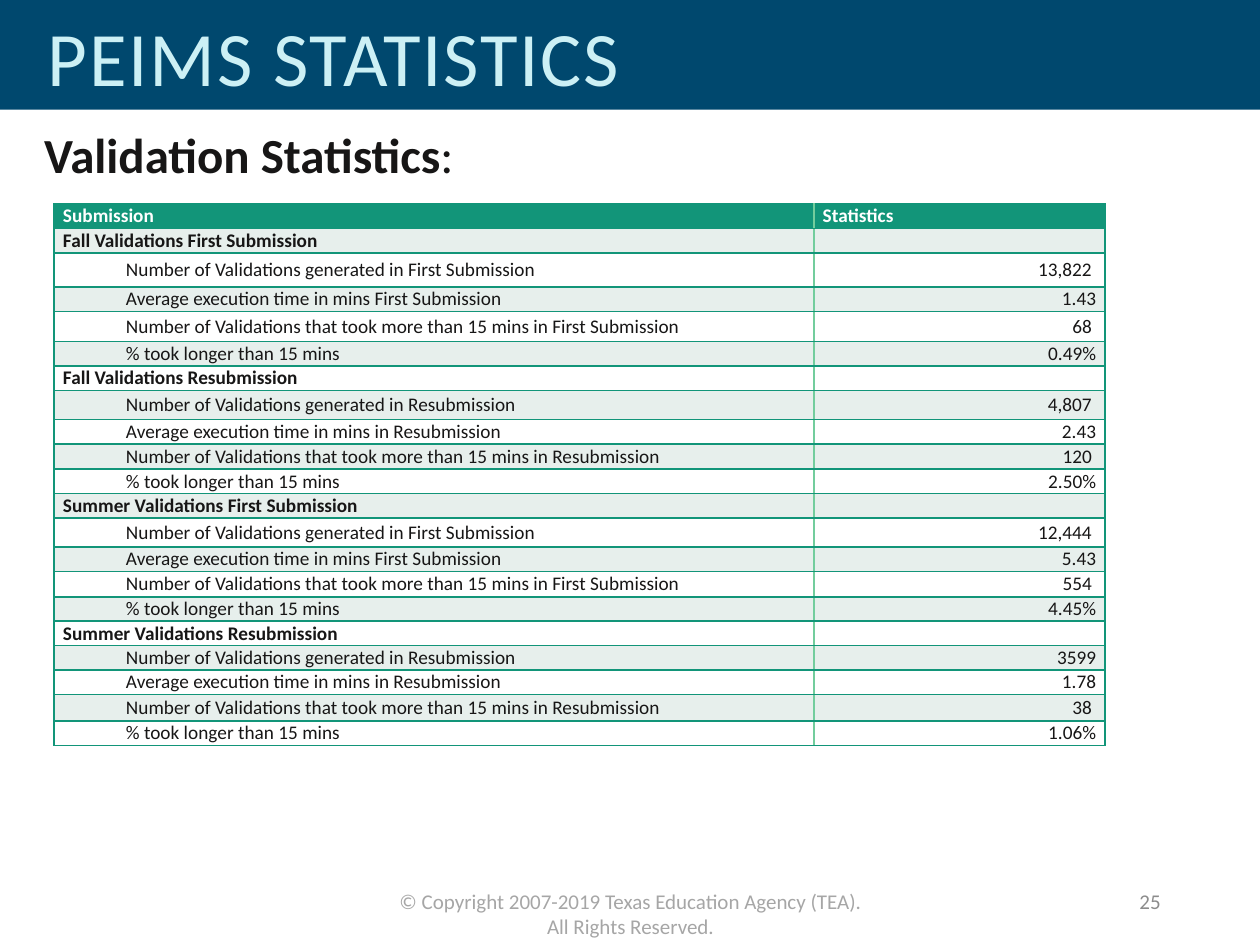
"""Build the PEIMS validation statistics slide."""
from dataclasses import dataclass

from lxml.etree import SubElement
from pptx import Presentation
from pptx.dml.color import RGBColor as Color
from pptx.enum.shapes import MSO_SHAPE as Shape
from pptx.enum.text import MSO_ANCHOR as Anchor, MSO_AUTO_SIZE as AutoSize, PP_ALIGN as Align
from pptx.oxml.ns import qn
from pptx.util import Inches, Pt


@dataclass(frozen=True)
class Theme:
    font: str = "Calibri"
    band: str = "00486E"
    title: str = "CCF0F5"
    ink: str = "171616"
    white: str = "FFFFFF"
    green: str = "129579"
    divider: str = "73CD9D"
    stripe: str = "E7EFEC"
    footer: str = "A6A6A6"
    number: str = "8C8C8C"
    title_size: int = 44
    heading_size: int = 28
    footer_size: int = 12
    table_size: int = 11


theme = Theme()


def add_span(para, text, size, color, bold=False):
    span = para.add_run()
    span.text = text
    span.font.name = theme.font
    span.font.size = Pt(size)
    span.font.bold = bold
    span.font.color.rgb = Color.from_string(color)
    return span


def add_border(cell, side, color):
    line = SubElement(cell._tc.get_or_add_tcPr(), qn(f"a:ln{side}"), w=str(Pt(1)))
    fill = SubElement(line, qn("a:solidFill"))
    SubElement(fill, qn("a:srgbClr"), val=color)


deck = Presentation()
deck.slide_width, deck.slide_height = Inches(10), Inches(7.5)
page = deck.slides.add_slide(deck.slide_layouts[1])
title, body = page.placeholders

band = page.shapes.add_shape(Shape.RECTANGLE, 0, 0, Inches(10), Inches(0.87))
band.shadow.inherit = False
band.fill.solid()
band.fill.fore_color.rgb = Color.from_string(theme.band)
band.line.fill.background()
title.element.addprevious(band.element)

title.left, title.top, title.width, title.height = Inches(0.28), Inches(0.05), Inches(8.41), Inches(0.87)
title.text_frame.auto_size = AutoSize.NONE
title.text_frame.vertical_anchor = Anchor.MIDDLE
para = title.text_frame.paragraphs[0]
para.alignment = Align.LEFT
para.line_spacing = 0.9
span = add_span(para, "PEIMS STATISTICS", theme.title_size, theme.title)
span.font._element.set("spc", "100")

body.left, body.top, body.width, body.height = Inches(0.25), Inches(0.99), Inches(9.06), Inches(5.76)
body.text_frame.auto_size = AutoSize.NONE
para = body.text_frame.paragraphs[0]
para.line_spacing = 0.9
para.space_before = Pt(0)
properties = para._p.get_or_add_pPr()
properties.set("marL", "0")
properties.set("indent", "0")
SubElement(properties, qn("a:buNone"))
add_span(para, "Validation Statistics", theme.heading_size, theme.ink, True)
add_span(para, ":", theme.heading_size, theme.ink)

groups = [
    ("Fall", "First Submission", ["13,822 ", "1.43", "68 ", "0.49%"]),
    ("Fall", "Resubmission", ["4,807 ", "2.43", "120 ", "2.50%"]),
    ("Summer", "First Submission", ["12,444 ", "5.43", "554 ", "4.45%"]),
    ("Summer", "Resubmission", ["3599", "1.78", "38 ", "1.06%"]),
]
rows = [("Submission", "Statistics")]
for season, stage, values in groups:
    average_stage = f"in {stage}" if stage == "Resubmission" else stage
    labels = [
        f"Number of Validations generated in {stage}",
        f"Average execution time in mins {average_stage}",
        f"Number of Validations that took more than 15 mins in {stage}",
        "% took longer than 15 mins",
    ]
    rows += [(f"{season} Validations {stage}", ""), *zip(labels, values)]

table_height = Inches(4.3)
tall_rows = {2: 0.27, 4: 0.24, 7: 0.23, 9: 0.2, 12: 0.23, 14: 0.2, 19: 0.21}
plain_height = (table_height - Inches(sum(tall_rows.values()))) // (len(rows) - len(tall_rows))

table = page.shapes.add_table(
    len(rows), 2, Inches(0.43), Inches(1.62), Inches(8.34), table_height
).table
table.horz_banding = False
table.columns[0].width, table.columns[1].width = Inches(6.03), Inches(2.31)

for index, texts in enumerate(rows):
    table.rows[index].height = Inches(tall_rows[index]) if index in tall_rows else plain_height
    is_header = index == 0
    is_detail = not is_header and texts[1] != ""
    fill = theme.green if is_header else theme.stripe if index % 2 else theme.white
    for column, text in enumerate(texts):
        cell = table.cell(index, column)
        cell.vertical_anchor = Anchor.MIDDLE
        cell.margin_left = cell.margin_right = Inches(0.07)
        cell.margin_top = cell.margin_bottom = 0
        add_border(cell, "L", theme.divider if column else theme.green)
        add_border(cell, "R", theme.green if column else theme.divider)
        add_border(cell, "T", theme.green)
        add_border(cell, "B", theme.green)
        cell.fill.solid()
        cell.fill.fore_color.rgb = Color.from_string(fill)
        para = cell.text_frame.paragraphs[0]
        if is_detail and column:
            para.alignment = Align.RIGHT
        elif is_detail:
            para.level = 1
            para._p.get_or_add_pPr().set("marL", str(Inches(0.5)))
        if text:
            color = theme.white if is_header else theme.ink
            add_span(para, text, theme.table_size, color, not is_detail)
        else:
            SubElement(para._p, qn("a:endParaRPr"), sz=str(theme.table_size * 100))

notices = [
    ("© Copyright 2007-2019 Texas Education Agency (TEA). All Rights Reserved.",
     (3.04, 7, 3.93, 0.3), Align.CENTER, Anchor.TOP, theme.footer),
    ("25", (7.06, 6.95, 2.25, 0.4), Align.RIGHT, Anchor.MIDDLE, theme.number),
]
for text, place, alignment, anchor, color in notices:
    box = page.shapes.add_textbox(*map(Inches, place))
    box.text_frame.word_wrap = True
    box.text_frame.vertical_anchor = anchor
    para = box.text_frame.paragraphs[0]
    para.alignment = alignment
    add_span(para, text, theme.footer_size, color)

deck.save("out.pptx")
